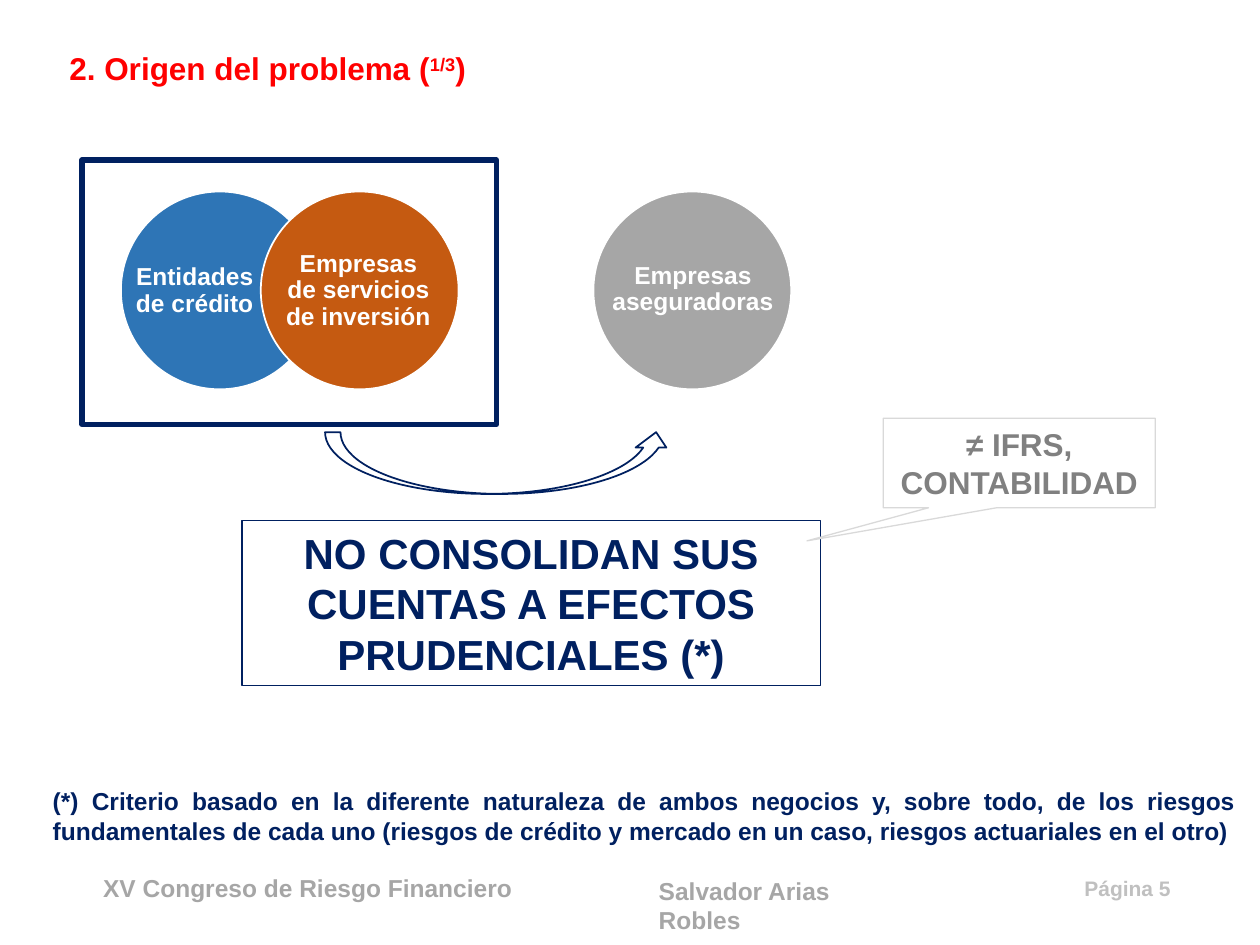
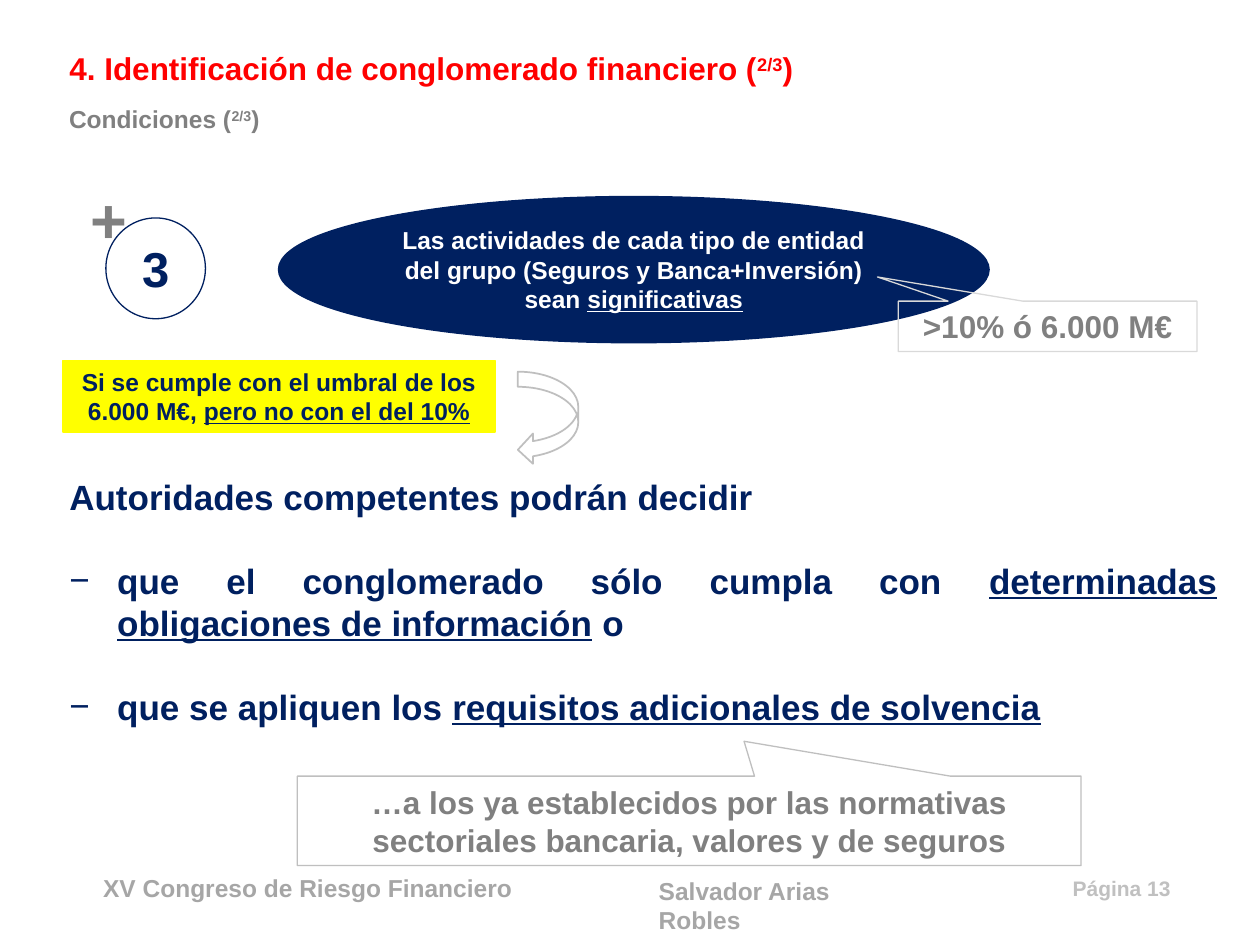
from lxml import etree
from pptx import Presentation
from pptx.dml.color import RGBColor
from pptx.enum.shapes import MSO_SHAPE
from pptx.enum.text import MSO_ANCHOR, MSO_AUTO_SIZE, PP_ALIGN
from pptx.oxml.ns import qn
from pptx.util import Inches, Pt

FONT = "Arial"
NAVY = RGBColor(0x00, 0x20, 0x60)
RED = RGBColor(0xFF, 0x00, 0x00)
WHITE = RGBColor(0xFF, 0xFF, 0xFF)
YELLOW = RGBColor(0xFF, 0xFF, 0x00)
BLUE = RGBColor(0x2E, 0x75, 0xB6)
ORANGE = RGBColor(0xC5, 0x5A, 0x11)
GREY = RGBColor(0x80, 0x80, 0x80)
MID_GREY = RGBColor(0xA6, 0xA6, 0xA6)
ARROW_GREY = RGBColor(0xBF, 0xBF, 0xBF)
PAGE_GREY = RGBColor(0xC0, 0xC0, 0xC0)
PALE_GREY = RGBColor(0xD9, 0xD9, 0xD9)

LEFT, CENTER, RIGHT, JUSTIFY = (
    PP_ALIGN.LEFT, PP_ALIGN.CENTER, PP_ALIGN.RIGHT, PP_ALIGN.JUSTIFY)


# Shared helpers: a box is (left, top, width, height) in inches
def place(sp, box):
    sp.left, sp.top, sp.width, sp.height = map(Inches, box)


def write(p, parts, size, color, align=LEFT):
    """Fill a paragraph with plain strings or (string, "u" | "sup") pairs."""
    p.alignment = align
    p.space_before = Pt(0)
    for part in [parts] if isinstance(parts, str) else parts:
        content, style = (part, "") if isinstance(part, str) else part
        r = p.add_run()
        r.text = content
        f = r.font
        f.name, f.size, f.bold = FONT, Pt(size), True
        f.color.rgb = color
        if style == "u":
            f.underline = True
        elif style == "sup":
            r._r.get_or_add_rPr().set("baseline", "30000")


def add_text(s, box, parts, size, color, align=LEFT):
    sp = s.shapes.add_textbox(*map(Inches, box))
    sp.text_frame.word_wrap = True
    write(sp.text_frame.paragraphs[0], parts, size, color, align)
    return sp


def add_shape(s, kind, box, line, width=0.75, fill=None, adj=()):
    sp = s.shapes.add_shape(kind, *map(Inches, box))
    sp.shadow.inherit = False
    sp.line.color.rgb = line
    sp.line.width = Pt(width)
    if fill is None:
        sp.fill.background()
    else:
        sp.fill.solid()
        sp.fill.fore_color.rgb = fill
    for i, value in enumerate(adj):
        sp.adjustments[i] = value
    return sp


def label(sp, parts, size, color):
    sp.text_frame.word_wrap = True
    write(sp.text_frame.paragraphs[0], parts, size, color, CENTER)


def add_callout(s, box, tip, line, message):
    sp = add_shape(s, MSO_SHAPE.RECTANGULAR_CALLOUT, box, line, adj=tip)
    label(sp, message, 18, GREY)


def start_slide(prs, layout, title, part, page):
    """Slide with the red heading and the common footer."""
    s = prs.slides.add_slide(prs.slide_layouts[layout])
    sp = s.shapes.title
    place(sp, (0.45, 0.34, 9.1, 0.4))
    tf = sp.text_frame
    tf.vertical_anchor = MSO_ANCHOR.TOP
    tf.auto_size = MSO_AUTO_SIZE.NONE
    write(tf.paragraphs[0], [title + " (", (part, "sup"), ")"], 18, RED)

    add_text(s, (0.72, 6.88, 3.47, 0.34),
             "XV Congreso de Riesgo Financiero", 14, MID_GREY)
    add_text(s, (5.13, 6.9, 1.8, 0.57), "Salvador Arias Robles", 14, MID_GREY)
    add_text(s, (8.29, 6.9, 1.1, 0.3), f"Página {page}", 12, PAGE_GREY, RIGHT)
    return s


# Slide: origin of the problem
def add_entity_circles(s, box):
    left, top, diameter = box[0], box[1], 1.57
    # circle offset, colour, label offset, label width, label middle, name
    entities = [
        (0, BLUE, 0.03, 1.11, 0.79, "Entidades de crédito"),
        (1.11, ORANGE, 1.3, 1.17, 0.79, "Empresas de servicios de inversión"),
        (3.75, MID_GREY, 3.9, 1.28, 0.78, "Empresas aseguradoras"),
    ]
    for dx, color, label_dx, width, middle, name in entities:
        add_shape(s, MSO_SHAPE.OVAL, (left + dx, top, diameter, diameter),
                  WHITE, 1, color)
        sp = add_text(s, (left + label_dx, top + middle - 0.55, width, 1.1),
                      name, 14, WHITE, CENTER)
        tf = sp.text_frame
        tf.margin_left = tf.margin_right = tf.margin_top = tf.margin_bottom = 0
        tf.vertical_anchor = MSO_ANCHOR.MIDDLE
        tf.paragraphs[0].line_spacing = 0.9


def build_origin(prs):
    s = start_slide(prs, 5, "2. Origen del problema", "1/3", 5)
    add_shape(s, MSO_SHAPE.CURVED_UP_ARROW, (2.58, 3.43, 2.75, 0.49), NAVY, 1)
    conclusion = add_shape(s, MSO_SHAPE.RECTANGLE, (1.92, 4.13, 4.59, 1.31), NAVY)
    label(conclusion, "NO CONSOLIDAN SUS CUENTAS A EFECTOS PRUDENCIALES (*)",
          24, NAVY)
    add_callout(s, (7.01, 3.32, 2.16, 0.71), (-0.78, 0.87), PALE_GREY,
                "≠ IFRS, CONTABILIDAD")

    # Entities, with a frame round the consolidated ones
    add_entity_circles(s, (0.96, 1.52, 5.32, 1.57))
    add_shape(s, MSO_SHAPE.RECTANGLE, (0.65, 1.27, 3.29, 2.1), NAVY, 3)

    add_text(s, (0.32, 6.19, 9.59, 0.57),
             "(*) Criterio basado en la diferente naturaleza de ambos negocios y, "
             "sobre todo, de los riesgos fundamentales de cada uno (riesgos de "
             "crédito y mercado en un caso, riesgos actuariales en el otro)",
             14, NAVY, JUSTIFY)


# Slide: conditions of a financial conglomerate
def add_condition(s, box):
    left, top = box[:2]
    oval = add_shape(s, MSO_SHAPE.OVAL, (left + 1.6, top + 0.19, 5.62, 1.14),
                     NAVY, 2.25, NAVY)
    label(oval, ["Las actividades de cada tipo de entidad del grupo "
                 "(Seguros y Banca+Inversión) sean ", ("significativas", "u")],
          14, WHITE)
    add_text(s, (left, top, 0.61, 0.71), "+", 36, GREY)
    number = add_shape(s, MSO_SHAPE.OVAL, (left + 0.22, top + 0.35, 0.79, 0.8), NAVY)
    label(number, "3", 28, NAVY)
    add_callout(s, (left + 6.51, top + 1.01, 2.37, 0.4), (-0.57, -0.98),
                PALE_GREY, ">10% ó 6.000 M€")


def set_dash(p, dash):
    """Hanging dash, or no bullet and no indent when dash is empty."""
    pPr = p._p.get_or_add_pPr()
    indent = Inches(0.38) if dash else 0
    pPr.set("marL", str(indent))
    pPr.set("indent", str(-indent))
    if dash:
        etree.SubElement(pPr, qn("a:buFont")).set("typeface", FONT)
        etree.SubElement(pPr, qn("a:buChar")).set("char", dash)
    else:
        etree.SubElement(pPr, qn("a:buNone"))


def fill_decisions(sp, box):
    place(sp, box)
    tf = sp.text_frame
    tf.auto_size = MSO_AUTO_SIZE.NONE
    decisions = [
        ("", "Autoridades competentes podrán decidir"),
        ("−", ["que el conglomerado sólo cumpla con ",
               ("determinadas obligaciones de información", "u"), " o"]),
        ("−", ["que se apliquen los ",
               ("requisitos adicionales de solvencia", "u")]),
    ]
    for i, (dash, parts) in enumerate(decisions):
        p = tf.add_paragraph() if i else tf.paragraphs[0]
        set_dash(p, dash)
        write(p, parts, 20, NAVY, JUSTIFY)
        if i:
            p.space_before = Pt(24)


def build_conditions(prs):
    s = start_slide(prs, 1, "4. Identificación de conglomerado financiero",
                    "2/3", 13)
    add_text(s, (0.45, 0.78, 2.24, 0.34),
             ["Condiciones (", ("2/3", "sup"), ")"], 14, GREY)
    add_condition(s, (0.62, 1.38, 8.88, 1.41))

    # Exception and what the authorities may decide
    exception = add_shape(s, MSO_SHAPE.RECTANGLE, (0.5, 2.86, 3.43, 0.57),
                          YELLOW, fill=YELLOW)
    label(exception, ["Si se cumple con el umbral de los 6.000 M€, ",
                      ("pero no con el del 10%", "u")], 14, NAVY)
    add_shape(s, MSO_SHAPE.CURVED_LEFT_ARROW, (4.11, 2.95, 0.48, 0.74),
              ARROW_GREY, 1)
    fill_decisions(s.placeholders[1], (0.45, 3.72, 9.31, 2.12))
    add_callout(s, (2.36, 6.16, 6.22, 0.71), (0.07, -0.89), ARROW_GREY,
                "…a los ya establecidos por las normativas sectoriales "
                "bancaria, valores y de seguros")


def main():
    prs = Presentation()
    prs.slide_width, prs.slide_height = Inches(10), Inches(7.5)
    build_origin(prs)
    build_conditions(prs)
    prs.save("out.pptx")


if __name__ == "__main__":
    main()
